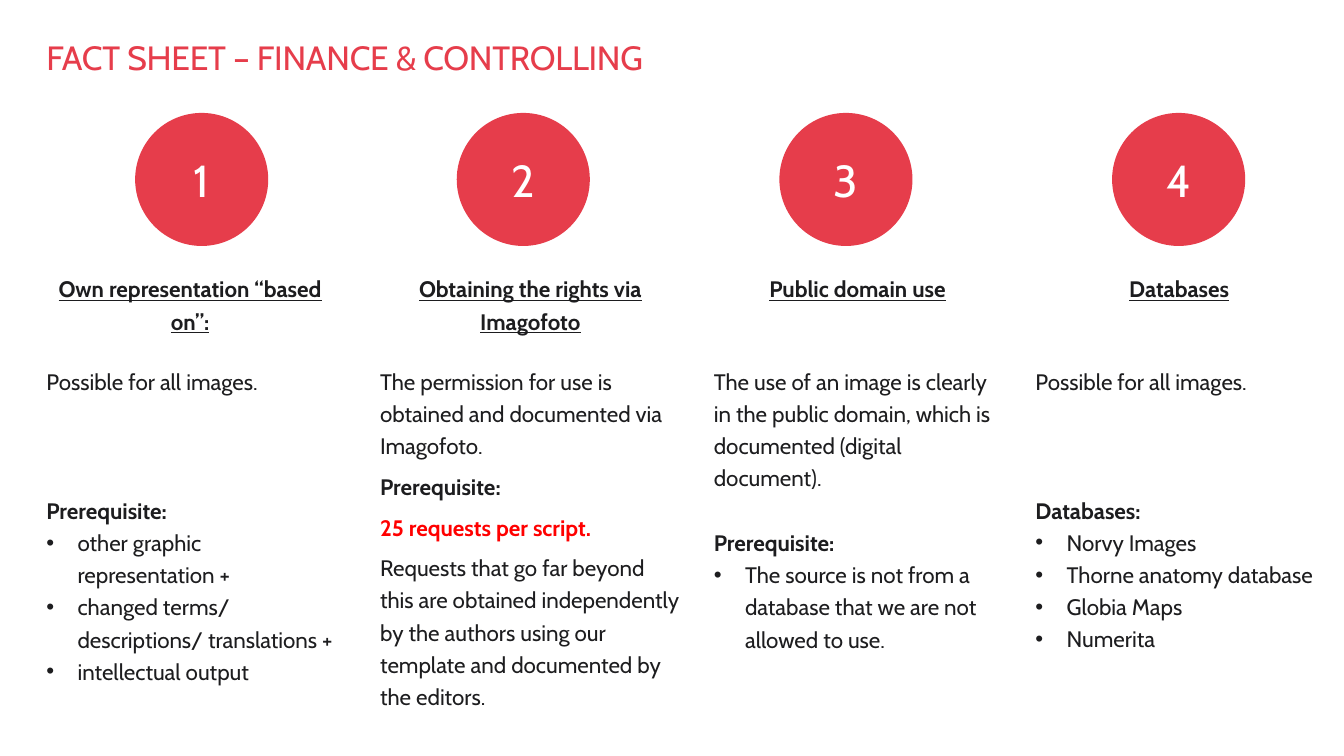
from pptx import Presentation
from pptx import util as u
from pptx.dml.color import RGBColor
from pptx.enum import shapes, text
from lxml import etree

FONT = "Cabin"
RED, INK, ALERT, WHITE = "E63D4B", "1D1D1F", "FF0000", "FFFFFF"
LINE_GAP = 23
HEADING_GAP = 20
CIRCLE_SIZE = 1.32
INDENT = u.Inches(0.31)

COLUMNS = [
    (0.46, 2.85, 0.88, "Own representation “based on”:", [
        ("Possible for all images.", "plain", HEADING_GAP),
        ("Prerequisite:", "bold", 3 * LINE_GAP),
        ("other graphic representation +", "bullet", 0),
        ("changed terms/ descriptions/ translations +", "bullet", 0),
        ("intellectual output", "bullet", 0),
    ]),
    (3.77, 2.98, 0.76, "Obtaining the rights via Imagofoto", [
        ("The permission for use is obtained and documented via Imagofoto.",
         "plain", HEADING_GAP),
        ("Prerequisite:", "bold", 6),
        ("25 requests per script.", "alert", 6),
        ("Requests that go far beyond this are obtained independently by the "
         "authors using our template and documented by the editors.", "plain", 6),
    ]),
    (7.08, 2.85, 0.65, "Public domain use", [
        ("The use of an image is clearly in the public domain, which is "
         "documented (digital document).", "plain", HEADING_GAP + LINE_GAP),
        ("Prerequisite:", "bold", LINE_GAP),
        ("The source is not from a database that we are not allowed to use.",
         "bullet", 0),
    ]),
    (10.27, 2.85, 0.76, "Databases", [
        ("Possible for all images.", "plain", HEADING_GAP + LINE_GAP),
        ("Databases:", "bold", 3 * LINE_GAP),
        ("Norvy Images", "bullet", 0),
        ("Thorne anatomy database", "bullet", 0),
        ("Globia Maps", "bullet", 0),
        ("Numerita", "bullet", 0),
    ]),
]


def color(value):
    return RGBColor.from_string(value)


def add_span(para, words, size, ink, bold=False, underline=False):
    span = para.add_run()
    span.text = words
    span.font.name = FONT
    span.font.size = u.Pt(size)
    span.font.bold = bold
    span.font.underline = underline
    span.font.color.rgb = color(ink)
    return span


def add_text_box(page, left, top, width, height):
    box = page.shapes.add_textbox(*map(u.Inches, (left, top, width, height)))
    frame = box.text_frame
    frame.word_wrap = True
    frame.margin_left = frame.margin_right = 0
    frame.margin_top = frame.margin_bottom = 0
    return frame


def add_bullet(para):
    properties = para._p.get_or_add_pPr()
    properties.set("marL", str(INDENT))
    properties.set("indent", str(-INDENT))
    namespace = properties.nsmap["a"]
    font = etree.SubElement(properties, f"{{{namespace}}}buFont")
    font.set("typeface", "Arial")
    mark = etree.SubElement(properties, f"{{{namespace}}}buChar")
    mark.set("char", "•")


def add_title(page, left, top, width, height):
    frame = add_text_box(page, left, top, width, height)
    frame.vertical_anchor = text.MSO_ANCHOR.MIDDLE
    para = frame.paragraphs[0]
    para.line_spacing = 0.9
    span = add_span(para, "FACT SHEET – FINANCE & CONTROLLING", 24, RED)
    span.font._element.set("spc", "-20")


def add_number(page, left, top, number):
    circle = page.shapes.add_shape(
        shapes.MSO_SHAPE.OVAL, u.Inches(left), u.Inches(top),
        u.Inches(CIRCLE_SIZE), u.Inches(CIRCLE_SIZE))
    circle.shadow.inherit = False
    circle.fill.solid()
    circle.fill.fore_color.rgb = color(RED)
    circle.line.fill.background()
    circle.text_frame.vertical_anchor = text.MSO_ANCHOR.MIDDLE
    para = circle.text_frame.paragraphs[0]
    para.alignment = text.PP_ALIGN.CENTER
    add_span(para, str(number), 32, WHITE)


def add_column(page, left, top, width, height, number, circle_offset, heading, body):
    add_number(page, left + circle_offset, top, number)
    frame = add_text_box(page, left, top + 1.56, width, height - 1.56)
    para = frame.paragraphs[0]
    para.alignment = text.PP_ALIGN.CENTER
    para.line_spacing = 1.2
    add_span(para, heading, 16, INK, bold=True, underline=True)
    for words, style, gap in body:
        para = frame.add_paragraph()
        para.line_spacing = 1.2
        para.space_before = u.Pt(gap)
        if style == "bullet":
            add_bullet(para)
        ink = ALERT if style == "alert" else INK
        add_span(para, words, 16, ink, bold=style in ("bold", "alert"))


def main():
    deck = Presentation()
    deck.slide_width = u.Inches(13.33)
    deck.slide_height = u.Inches(7.5)
    page = deck.slides.add_slide(deck.slide_layouts[6])
    add_title(page, 0.46, 0.38, 12.41, 0.42)
    for number, (left, width, offset, heading, body) in enumerate(COLUMNS, 1):
        add_column(page, left, 1.12, width, 6.06, number, offset, heading, body)
    deck.save("out.pptx")


if __name__ == "__main__":
    main()
